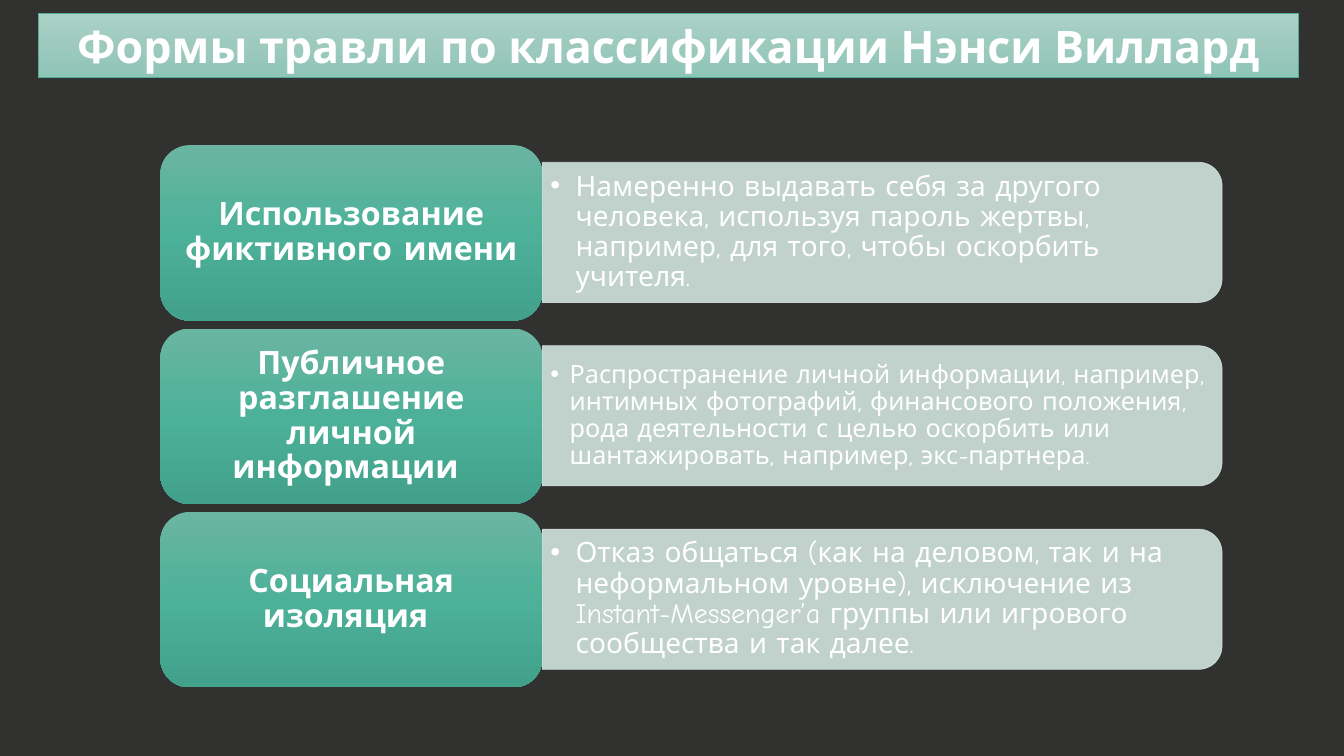
from dataclasses import dataclass

from lxml import etree
from pptx import Presentation
from pptx import util as u
from pptx.dml.color import RGBColor
from pptx.enum import shapes, text
from pptx.oxml.ns import qn


@dataclass(frozen=True)
class Theme:
    back: str = "31312F"
    white: str = "FFFFFF"
    panel: str = "D1E3DD"
    edge: str = "52AC97"
    head: tuple = ("ACD2C7", "9ECABE", "8DC5B6")
    card: tuple = ("6AB5A2", "4DB199", "41A18A")
    opaque: int = 90
    title: str = "Karla"
    body: str = "Comic Neue"
    big: int = 32
    mid: int = 23


def rgb(code):
    return RGBColor.from_string(code)


class Deck:
    def __init__(self, theme):
        self.theme = theme
        self.prs = Presentation()
        self.prs.slide_width = u.Inches(13.33)
        self.prs.slide_height = u.Inches(7.5)
        self.slide = self.prs.slides.add_slide(self.prs.slide_layouts[4])
        fill = self.slide.background.fill
        fill.solid()
        fill.fore_color.rgb = rgb(theme.back)

    def place(self, shape, box):
        shape.left, shape.top, shape.width, shape.height = map(u.Inches, box)

    def fade(self, shape, tones):
        shape.fill.gradient()
        shape.fill.gradient_angle = 270
        stops = shape.element.spPr.find(".//" + qn("a:gsLst"))
        stops.clear()
        for i, tone in enumerate(tones):
            stop = etree.SubElement(stops, qn("a:gs"), pos=str(i * 50000))
            etree.SubElement(stop, qn("a:srgbClr"), val=tone)

    def label(self, shape, words, font, size, bold, inset=(0.1, 0.05)):
        frame = shape.text_frame
        frame.text = words
        frame.word_wrap = True
        frame.auto_size = text.MSO_AUTO_SIZE.NONE
        frame.vertical_anchor = text.MSO_ANCHOR.MIDDLE
        frame.margin_left = frame.margin_right = u.Inches(inset[0])
        frame.margin_top = frame.margin_bottom = u.Inches(inset[1])
        para = frame.paragraphs[0]
        para.alignment = text.PP_ALIGN.CENTER
        para.space_before = u.Pt(0)
        face = para.runs[0].font
        face.name, face.size, face.bold = font, u.Pt(size), bold
        face.color.rgb = rgb(self.theme.white)
        return para

    def title(self, words, box):
        shape = self.slide.shapes.title
        self.place(shape, box)
        self.fade(shape, self.theme.head)
        shape.line.color.rgb = rgb(self.theme.edge)
        shape.line.width = u.Pt(0.5)
        self.label(shape, words, self.theme.title, self.theme.big, True)

    def panel(self, left, top, wide, high):
        # A quarter turn swaps the sides around the same centre
        box = (left + (wide - high) / 2, top + (high - wide) / 2, high, wide)
        shape = self.slide.shapes.add_shape(
            shapes.MSO_SHAPE.ROUND_2_SAME_RECTANGLE, *map(u.Inches, box))
        shape.rotation = 90
        shape.shadow.inherit = False
        shape.fill.solid()
        shape.fill.fore_color.rgb = rgb(self.theme.panel)
        shape.line.color.rgb = rgb(self.theme.panel)
        shape.line.width = u.Pt(0.5)
        for tone in shape.element.spPr.iter(qn("a:srgbClr")):
            etree.SubElement(tone, qn("a:alpha"), val=str(self.theme.opaque * 1000))

    def card(self, words, box):
        shape = self.slide.shapes.add_shape(
            shapes.MSO_SHAPE.ROUNDED_RECTANGLE, *map(u.Inches, box))
        shape.shadow.inherit = False
        self.fade(shape, self.theme.card)
        shape.line.fill.background()
        para = self.label(shape, words, self.theme.body, self.theme.mid, True)
        para.line_spacing = 0.9

    def item(self, slot, words, size, indent, box):
        shape = self.slide.placeholders[slot]
        self.place(shape, box)
        # Bring the list in front of its panel
        shape.element.getparent().append(shape.element)
        para = self.label(shape, words, self.theme.body, size, False, (0.08, 0.04))
        props = para._p.get_or_add_pPr()
        props.set("marL", str(u.Inches(indent)))
        props.set("indent", str(u.Inches(-indent)))
        etree.SubElement(props, qn("a:buChar"), char="•")
        para.alignment = text.PP_ALIGN.LEFT
        para.level = 1
        para.line_spacing = 0.9

    def save(self):
        for shape in list(self.slide.placeholders):
            if not shape.text_frame.text:
                shape.element.getparent().remove(shape.element)
        self.prs.save("out.pptx")


# Form of bullying, explanation, type size, bullet indent
FORMS = [
    ("Использование фиктивного имени",
     "Намеренно выдавать себя за другого человека, используя пароль жертвы, "
     "например, для того, чтобы оскорбить учителя.", 20, 0.25),
    ("Публичное разглашение личной информации ",
     "Распространение личной информации, например, интимных фотографий, "
     "финансового положения, рода деятельности с целью оскорбить или "
     "шантажировать, например, экс-партнера.", 18, 0.19),
    ("Социальная изоляция ",
     "Отказ общаться (как на деловом, так и на неформальном уровне), "
     "исключение из Instant-Messenger’a группы или игрового сообщества "
     "и так далее.", 20, 0.25),
]


def main():
    deck = Deck(Theme())

    # Heading
    deck.title("Формы травли по классификации Нэнси Виллард",
               (0.38, 0.13, 12.5, 0.64))

    # One row for each form
    for i, (name, words, size, indent) in enumerate(FORMS):
        top = 1.44 + i * 1.82
        deck.panel(5.38, top + 0.17, 6.74, 1.39)
        deck.item(i + 1, words, size, indent, (5.38, top + 0.24, 6.67, 1.25))
        deck.card(name, (1.59, top, 3.79, 1.74))

    deck.save()


if __name__ == "__main__":
    main()
